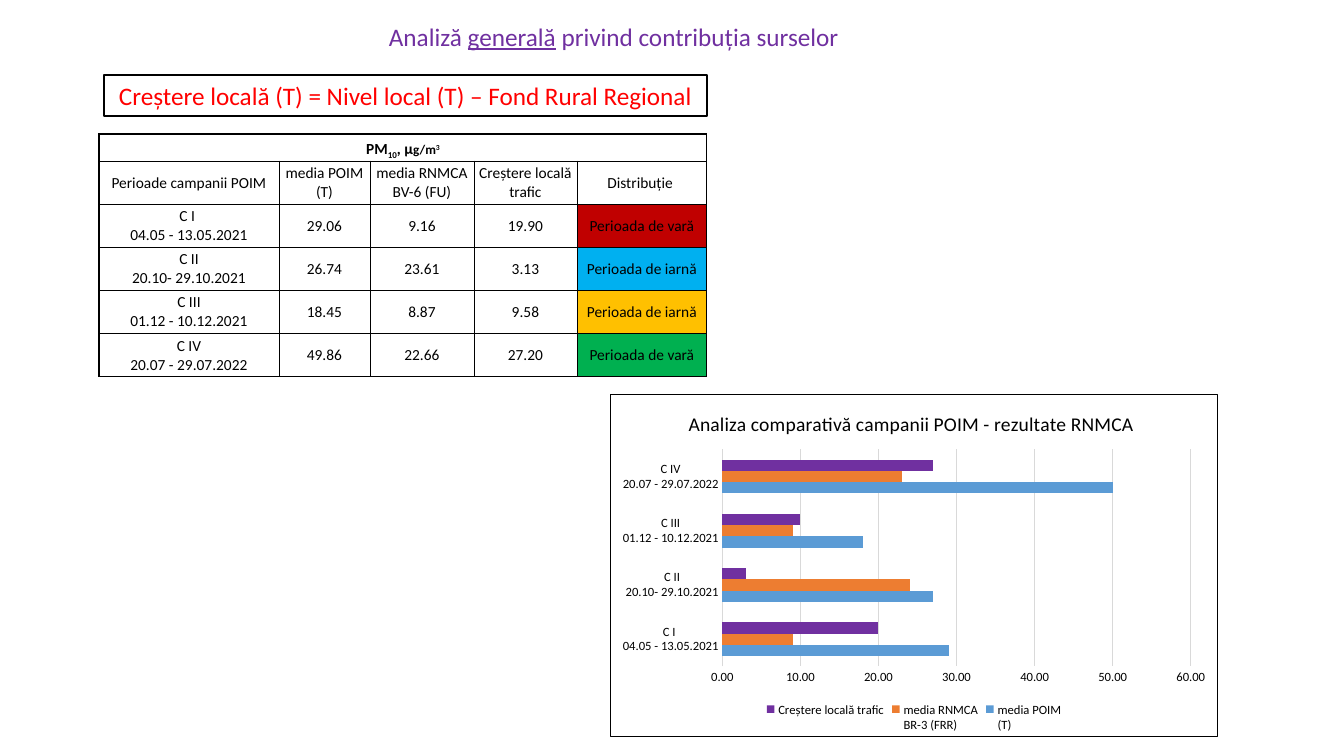
import pptx
import pptx.util
import pptx.dml.color
import pptx.chart.data
import pptx.enum.chart
import pptx.enum.shapes
import pptx.enum.text
import pptx.oxml
import pptx.oxml.ns
from dataclasses import dataclass

# Content
TITLE = [("Analiză ", False), ("generală", True), (" privind contribuția surselor", False)]
FORMULA = "Creștere locală (T) = Nivel local (T) – Fond Rural Regional"
# text, size, baseline in thousandths of a percent
POLLUTANT = [("PM", 11, 0), ("10", 11, -25000), (", µ", 11, 0), ("g/m", 9.4, 0), ("3", 9.4, 30000)]
HEADINGS = ["Perioade campanii POIM", "media POIM\n(T)", "media RNMCA\nBV-6 (FU)",
            "Creștere locală trafic", "Distribuție "]
CAMPAIGNS = [
    ("C I \n04.05 - 13.05.2021", 29.06, 9.16, 19.90, "Perioada de vară", "C00000"),
    ("C II\n20.10- 29.10.2021", 26.74, 23.61, 3.13, "Perioada de iarnă", "00B0F0"),
    ("C III\n01.12 - 10.12.2021", 18.45, 8.87, 9.58, "Perioada de iarnă", "FFC000"),
    ("C IV\n20.07 - 29.07.2022", 49.86, 22.66, 27.20, "Perioada de vară", "00B050"),
]
CHART_TITLE = "Analiza comparativă campanii POIM - rezultate RNMCA "
SERIES = [("media POIM\n(T)", "5B9BD5"), ("media RNMCA\nBR-3 (FRR)", "ED7D31"),
          ("Creștere locală trafic", "7030A0")]

# Places in px: left, top, width, height
SLIDE_SIZE = (1344, 756)
TITLE_BOX = (379, 16, 483, 40)
FORMULA_BOX = (104, 75, 603, 41)
TABLE_AT = (99, 134)
COLUMNS = [180, 91, 104, 103, 130]
ROWS = [27] + [43] * 4 + [44]
CHART_BOX = (610, 394, 608, 343)


@dataclass(frozen=True)
class Theme:
    font: str = "Calibri"
    black: str = "000000"
    white: str = "FFFFFF"
    purple: str = "7030A0"
    red: str = "FF0000"
    grid: str = "D9D9D9"
    heading: float = 18
    chart_title: float = 14
    cell: float = 11
    chart: float = 10
    label: float = 9
    outer_line: float = 1
    grid_line: float = 0.75
    inner_line: float = 0.5


THEME = Theme()


def px(value):
    return pptx.util.Emu(round(value * 914400 / 100.8))


def box(place):
    return [px(value) for value in place]


def rgb(code):
    return pptx.dml.color.RGBColor.from_string(code)


def set_font(font, size, color, bold=None):
    font.name = THEME.font
    font.size = pptx.util.Pt(size)
    font.color.rgb = rgb(color)
    font.bold = bold


def set_line(line, color, width):
    line.color.rgb = rgb(color)
    line.width = pptx.util.Pt(width)


def add_title(slide):
    shape = slide.shapes.add_textbox(*box(TITLE_BOX))
    shape.text_frame.word_wrap = False
    paragraph = shape.text_frame.paragraphs[0]
    set_font(paragraph.font, THEME.heading, THEME.purple)
    for text, underlined in TITLE:
        run = paragraph.add_run()
        run.text = text
        run.font.underline = underlined


def add_formula(slide):
    shape = slide.shapes.add_shape(pptx.enum.shapes.MSO_SHAPE.RECTANGLE, *box(FORMULA_BOX))
    shape.shadow.inherit = False
    shape.fill.solid()
    shape.fill.fore_color.rgb = rgb(THEME.white)
    set_line(shape.line, THEME.black, THEME.outer_line)
    paragraph = shape.text_frame.paragraphs[0]
    paragraph.text = FORMULA
    paragraph.alignment = pptx.enum.text.PP_ALIGN.CENTER
    set_font(paragraph.font, THEME.heading, THEME.red)


def style_cell(cell, fill, widths):
    """Set anchor, margins, fill and the four borders (left, right, top, bottom)."""
    cell.vertical_anchor = pptx.enum.text.MSO_ANCHOR.MIDDLE
    cell.margin_left = cell.margin_right = cell.margin_top = px(1)
    cell.margin_bottom = 0
    if fill:
        cell.fill.solid()
        cell.fill.fore_color.rgb = rgb(fill)
    else:
        cell.fill.background()
    properties = cell._tc.get_or_add_tcPr()
    for index, (side, width) in enumerate(zip("LRTB", widths)):
        border = pptx.oxml.parse_xml(
            f'<a:ln{side} {pptx.oxml.ns.nsdecls("a")} w="{pptx.util.Pt(width)}"><a:solidFill>'
            f'<a:srgbClr val="{THEME.black}"/></a:solidFill></a:ln{side}>')
        properties.insert(index, border)


def add_table(slide):
    rows = [[""] * len(COLUMNS), HEADINGS]
    for period, *means, season, _ in CAMPAIGNS:
        rows.append([period, *(f"{mean:.2f}" for mean in means), season])
    place = (*TABLE_AT, sum(COLUMNS), sum(ROWS))
    table = slide.shapes.add_table(len(ROWS), len(COLUMNS), *box(place)).table
    table.first_row = table.horz_banding = False
    for column, width in zip(table.columns, COLUMNS):
        column.width = px(width)
    for row, height in zip(table.rows, ROWS):
        row.height = px(height)

    last_row, last_column = len(ROWS) - 1, len(COLUMNS) - 1
    for r, texts in enumerate(rows):
        for c, text in enumerate(texts):
            cell = table.cell(r, c)
            edges = (c == 0, c == last_column or r == 0, r == 0, r == last_row)
            widths = [THEME.outer_line if edge else THEME.inner_line for edge in edges]
            fill = CAMPAIGNS[r - 2][-1] if r > 1 and c == last_column else None
            style_cell(cell, fill, widths)
            paragraph = cell.text_frame.paragraphs[0]
            paragraph.text = text
            paragraph.alignment = pptx.enum.text.PP_ALIGN.CENTER
            set_font(paragraph.font, THEME.cell, THEME.black, bold=r == 0)

    # Pollutant heading across all columns
    heading = table.cell(0, 0)
    heading.merge(table.cell(0, last_column))
    heading.vertical_anchor = pptx.enum.text.MSO_ANCHOR.BOTTOM
    for text, size, baseline in POLLUTANT:
        run = heading.text_frame.paragraphs[0].add_run()
        run.text = text
        run.font.size = pptx.util.Pt(size)
        if baseline:
            run.font._element.set("baseline", str(baseline))


def add_chart(slide):
    data = pptx.chart.data.CategoryChartData(number_format="0.00")
    data.categories = [campaign[0] for campaign in CAMPAIGNS]
    for index, (name, _) in enumerate(SERIES, start=1):
        data.add_series(name, [round(campaign[index]) for campaign in CAMPAIGNS])
    kind = pptx.enum.chart.XL_CHART_TYPE.BAR_CLUSTERED
    chart = slide.shapes.add_chart(kind, *box(CHART_BOX), data).chart
    set_font(chart.font, THEME.chart, THEME.black)

    # Title and legend
    paragraph = chart.chart_title.text_frame.paragraphs[0]
    paragraph.text = CHART_TITLE
    set_font(paragraph.font, THEME.chart_title, THEME.black, bold=False)
    chart.has_legend = True
    chart.legend.position = pptx.enum.chart.XL_LEGEND_POSITION.BOTTOM
    chart.legend.include_in_layout = False
    set_font(chart.legend.font, THEME.label, THEME.black)

    # Bars
    plot = chart.plots[0]
    plot.gap_width = 182
    plot.vary_by_categories = False
    for series, (_, color) in zip(plot.series, SERIES):
        series.format.fill.solid()
        series.format.fill.fore_color.rgb = rgb(color)

    # Axes
    for axis in (chart.category_axis, chart.value_axis):
        axis.major_tick_mark = axis.minor_tick_mark = pptx.enum.chart.XL_TICK_MARK.NONE
        set_font(axis.tick_labels.font, THEME.label, THEME.black)
    set_line(chart.category_axis.format.line, THEME.grid, THEME.grid_line)
    values = chart.value_axis
    values.minimum_scale = 0
    values.format.line.fill.background()
    set_line(values.major_gridlines.format.line, THEME.grid, THEME.grid_line)
    values.tick_labels.number_format = "0.00"
    values.tick_labels.number_format_is_linked = False

    # Chart area: white with a black frame
    area = pptx.oxml.parse_xml(
        f'<c:spPr {pptx.oxml.ns.nsdecls("c", "a")}><a:solidFill><a:srgbClr val="{THEME.white}"/>'
        f'</a:solidFill><a:ln w="{pptx.util.Pt(THEME.outer_line)}"><a:solidFill>'
        f'<a:srgbClr val="{THEME.black}"/></a:solidFill></a:ln></c:spPr>')
    chart._chartSpace.chart.addnext(area)


def main():
    presentation = pptx.Presentation()
    presentation.slide_width, presentation.slide_height = box(SLIDE_SIZE)
    slide = presentation.slides.add_slide(presentation.slide_layouts[6])
    add_title(slide)
    add_formula(slide)
    add_table(slide)
    add_chart(slide)
    presentation.save("out.pptx")


if __name__ == "__main__":
    main()
